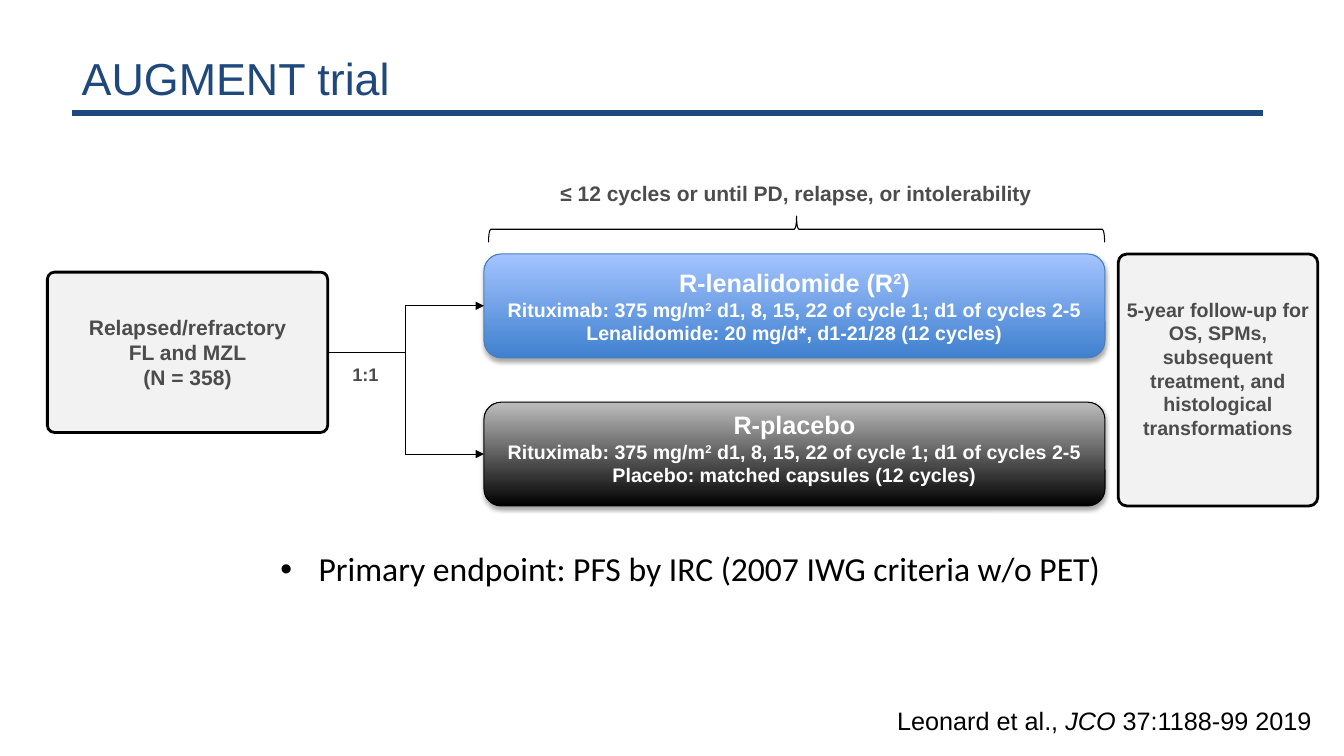
from lxml import etree
from pptx import Presentation
from pptx.dml.color import RGBColor
from pptx.enum.shapes import MSO_CONNECTOR as Connector, MSO_SHAPE as Preset
from pptx.enum.text import MSO_ANCHOR as Anchor, MSO_AUTO_SIZE as AutoSize, PP_ALIGN as Align
from pptx.oxml import parse_xml
from pptx.oxml.ns import nsdecls, qn
from pptx.util import Inches, Pt

COLORS = {
    "navy": "1F497D", "black": "000000", "white": "FFFFFF", "text": "4C4C4C",
    "panel": "F2F2F2", "blue_dark": "3F80CE", "blue_light": "A4C4FF",
    "blue_line": "4B7EBC", "gray_light": "BDBDBD",
}
TITLE = "AUGMENT trial"
ENDPOINT = "Primary endpoint: PFS by IRC (2007 IWG criteria w/o PET)"
CITATION = [("Leonard et al., ", ""), ("JCO ", "italic"), ("37:1188-99 2019", "")]
DURATION = "≤ 12 cycles or until PD, relapse, or intolerability"
RATIO = "1:1"
POPULATION = ["Relapsed/refractory", "FL and MZL", "(N = 358)"]
FOLLOW_UP = ["5-year follow-up for OS, SPMs, subsequent treatment, and histological transformations"]
RITUXIMAB = [("Rituximab: 375 mg/m", ""), ("2", "super"),
             (" d1, 8, 15, 22 of cycle 1; d1 of cycles 2-5", "")]
ARMS = [
    {"name": [("R-lenalidomide (R", ""), ("2", "super"), (")", "")],
     "drug": "Lenalidomide: 20 mg/d*, d1-21/28 (12 cycles)",
     "gradient": ("blue_dark", "blue_light"), "line": "blue_line", "bottom_inset": 0.03},
    {"name": [("R-placebo", "")],
     "drug": "Placebo: matched capsules (12 cycles)",
     "gradient": ("black", "gray_light"), "line": "black", "bottom_inset": 0.15},
]
ARM_LEFT, ARM_TOP, ARM_WIDTH, ARM_HEIGHT, ARM_STEP = 4.8, 2.52, 6.16, 1.03, 1.47


def color(name):
    return RGBColor.from_string(COLORS[name])


def place(shape, left, top, width, height):
    shape.left, shape.top = Inches(left), Inches(top)
    shape.width, shape.height = Inches(width), Inches(height)


def write(paragraph, runs, size, tint, bold=False, font="Arial", align=Align.CENTER):
    paragraph.alignment = align
    for text, style in [(runs, "")] if isinstance(runs, str) else runs:
        run = paragraph.add_run()
        run.text = text
        run.font.name, run.font.size, run.font.bold = font, Pt(size), bold
        run.font.color.rgb = color(tint)
        if style == "italic":
            run.font.italic = True
        if style == "super":
            run.font._element.set("baseline", "30000")


def write_lines(frame, lines, tint):
    for index, (runs, size) in enumerate(lines):
        paragraph = frame.add_paragraph() if index else frame.paragraphs[0]
        write(paragraph, runs, size, tint, bold=True)


def set_insets(frame, side, top, bottom):
    frame.word_wrap = True
    frame.vertical_anchor = Anchor.MIDDLE
    frame.margin_left = frame.margin_right = Inches(side)
    frame.margin_top, frame.margin_bottom = Inches(top), Inches(bottom)


def add_preset(slide, preset, box, line, width):
    shape = slide.shapes.add_shape(preset, *map(Inches, box))
    shape.shadow.inherit = False
    shape.line.color.rgb = color(line)
    shape.line.width = Pt(width)
    return shape


def add_arm(slide, arm, top):
    box = (ARM_LEFT, top, ARM_WIDTH, ARM_HEIGHT)
    shape = add_preset(slide, Preset.ROUNDED_RECTANGLE, box, arm["line"], 0.75)
    shape.fill.gradient()
    shape.fill.gradient_angle = 90
    for stop, name in zip(shape.fill.gradient_stops, arm["gradient"]):
        stop.color.rgb = color(name)
    effects = shape._element.spPr.find(qn("a:effectLst"))
    effects.append(parse_xml(
        f'<a:outerShdw {nsdecls("a")} blurRad="{Pt(3.1)}" dist="{Pt(1.8)}" dir="5400000" '
        f'rotWithShape="0"><a:srgbClr val="{COLORS["black"]}"><a:alpha val="35000"/>'
        '</a:srgbClr></a:outerShdw>'))
    set_insets(shape.text_frame, 0.06, 0.03, arm["bottom_inset"])
    write_lines(shape.text_frame, [(arm["name"], 18), (RITUXIMAB, 14), (arm["drug"], 14)], "white")
    return shape


def add_panel(slide, box, lines, size, bottom_inset):
    shape = add_preset(slide, Preset.ROUNDED_RECTANGLE, box, "black", 2)
    shape.adjustments[0] = 0.044
    shape.fill.solid()
    shape.fill.fore_color.rgb = color("panel")
    set_insets(shape.text_frame, 0.02, 0.02, bottom_inset)
    write_lines(shape.text_frame, [(line, size) for line in lines], "text")
    return shape


def add_line(slide, kind, points, tint, width):
    line = slide.shapes.add_connector(kind, *map(Inches, points))
    line.line.color.rgb = color(tint)
    line.line.width = Pt(width)
    etree.SubElement(line._element.spPr, qn("a:effectLst"))
    return line


def add_arrow(slide, source, target):
    arrow = add_line(slide, Connector.ELBOW, (0, 0, 1, 1), "black", 0.75)
    arrow.begin_connect(source, 3)
    arrow.end_connect(target, 1)
    etree.SubElement(arrow.line._get_or_add_ln(), qn("a:tailEnd"), type="triangle")


def add_label(slide, box, runs, size, tint="text", bold=True, wrap=False, align=Align.CENTER):
    label = slide.shapes.add_textbox(*map(Inches, box))
    label.text_frame.word_wrap = wrap
    write(label.text_frame.paragraphs[0], runs, size, tint, bold, align=align)


def fill_placeholders(slide):
    title, body = slide.placeholders
    place(title, 0.71, 0.57, 9, 0.39)
    title.text_frame.auto_size = AutoSize.NONE
    title.text_frame.vertical_anchor = Anchor.MIDDLE
    write(title.text_frame.paragraphs[0], TITLE, 32, "navy", align=Align.LEFT)

    place(body, 2.68, 5.31, 8.66, 0.67)
    body.text_frame.auto_size = AutoSize.NONE
    paragraph = body.text_frame.paragraphs[0]
    properties = paragraph._p.get_or_add_pPr()
    properties.set("marL", str(Inches(0.38)))
    properties.set("indent", str(-Inches(0.38)))
    etree.SubElement(properties, qn("a:buFont"), typeface="Arial")
    etree.SubElement(properties, qn("a:buChar"), char="•")
    paragraph.line_spacing = 1.2
    paragraph.space_before = Pt(0)
    write(paragraph, ENDPOINT, 24, "black", font="Calibri", align=Align.LEFT)


def main():
    presentation = Presentation()
    presentation.slide_width, presentation.slide_height = Inches(13.33), Inches(7.5)
    slide = presentation.slides.add_slide(presentation.slide_layouts[1])
    fill_placeholders(slide)

    arms = [add_arm(slide, arm, ARM_TOP + index * ARM_STEP) for index, arm in enumerate(ARMS)]
    population = add_panel(slide, (0.47, 2.7, 2.78, 1.59), POPULATION, 15, 0.02)
    add_panel(slide, (11.09, ARM_TOP, 1.98, ARM_STEP + ARM_HEIGHT), FOLLOW_UP, 14, 0.25)
    for arm in arms:
        add_arrow(slide, population, arm)

    add_label(slide, (4.62, 1.74, 6.55, 0.47), DURATION, 15)
    brace = add_preset(slide, Preset.LEFT_BRACE, (7.77, -0.78, 0.26, 6.11), "black", 0.75)
    brace.fill.background()
    brace.rotation = 90
    add_label(slide, (3.39, 3.55, 0.47, 0.32), RATIO, 13)
    add_label(slide, (8.8, 6.95, 4.54, 0.4), CITATION, 18, "black", False, True, Align.LEFT)
    add_line(slide, Connector.STRAIGHT, (0.71, 1.12, 12.53, 1.12), "navy", 4.5)
    presentation.save("out.pptx")


if __name__ == "__main__":
    main()
